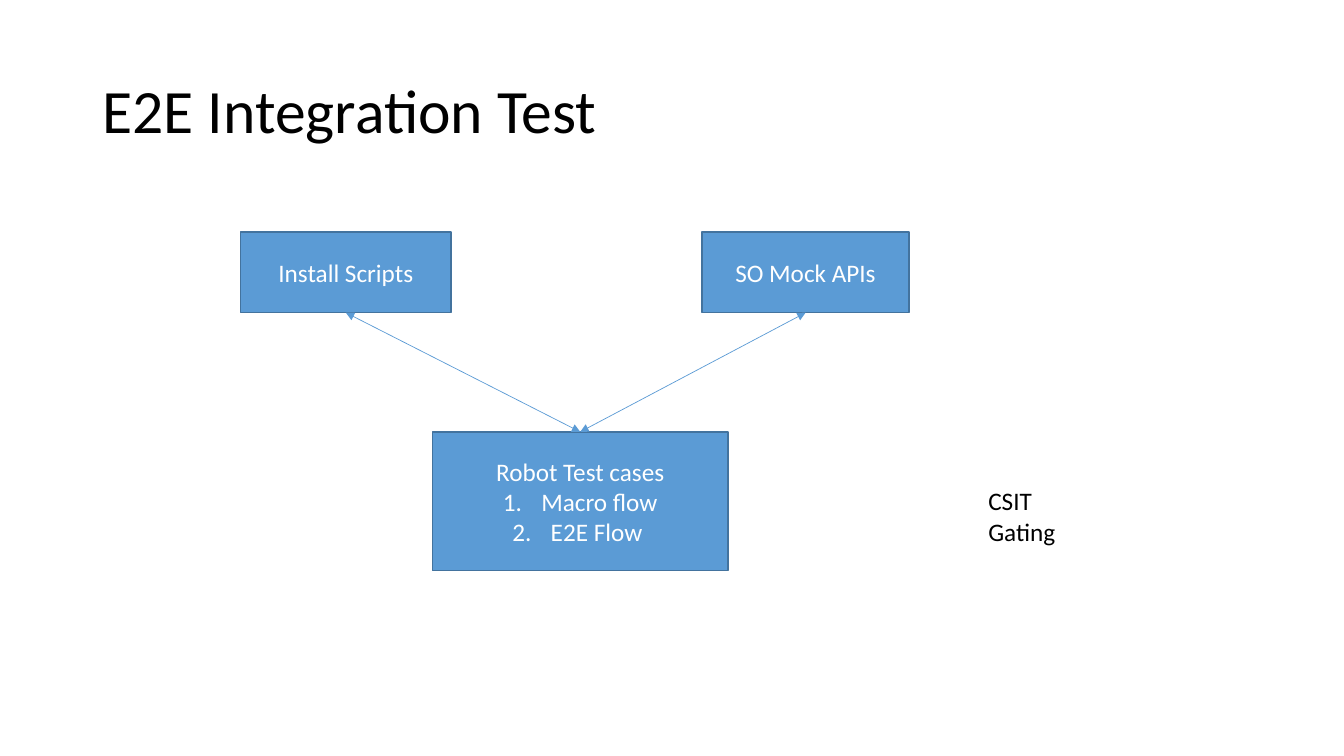
import pptx
import pptx.dml.color
import pptx.enum.shapes
import pptx.enum.text
import pptx.oxml.ns
import pptx.util
from lxml import etree

SLIDE_WIDTH = pptx.util.Inches(13.33)
SLIDE_HEIGHT = pptx.util.Inches(7.5)
SLIDE_BOX = (0, 0, SLIDE_WIDTH, SLIDE_HEIGHT)
FONT = "Calibri"
BLUE, DARK_BLUE, WHITE, BLACK = "5B9BD5", "43739E", "FFFFFF", "000000"


def color(hex_string):
    """Turn a hex string into a colour."""
    return pptx.dml.color.RGBColor.from_string(hex_string)


def part_of(box, left, top, width, height):
    """Return the part of a box given in percent of its size."""
    box_left, box_top, box_width, box_height = box
    return (
        round(box_left + box_width * left / 100),
        round(box_top + box_height * top / 100),
        round(box_width * width / 100),
        round(box_height * height / 100),
    )


def write(shape, lines, size, hex_string, alignment):
    """Fill a shape with one paragraph per line."""
    frame = shape.text_frame
    frame.text = "\n".join(lines)
    for paragraph in frame.paragraphs:
        paragraph.alignment = alignment
        paragraph.font.name = FONT
        paragraph.font.size = pptx.util.Pt(size)
        paragraph.font.color.rgb = color(hex_string)


def number(paragraph):
    """Give a paragraph an automatic number with a hanging indent."""
    indent = pptx.util.Inches(0.38)
    properties = paragraph._p.get_or_add_pPr()
    properties.set("marL", str(indent))
    properties.set("indent", str(-indent))
    numbering = etree.Element(pptx.oxml.ns.qn("a:buAutoNum"), type="arabicPeriod")
    properties.insert(0, numbering)


def add_title(slide, box, text):
    """Add the slide title, centred vertically in its box."""
    title = slide.shapes.add_textbox(*box)
    title.text_frame.word_wrap = True
    title.text_frame.vertical_anchor = pptx.enum.text.MSO_ANCHOR.MIDDLE
    write(title, [text], 44, BLACK, pptx.enum.text.PP_ALIGN.LEFT)
    title.text_frame.paragraphs[0].line_spacing = 0.9


def add_block(slide, box, lines):
    """Add a blue block whose lines after the first are numbered."""
    block = slide.shapes.add_shape(pptx.enum.shapes.MSO_SHAPE.RECTANGLE, *box)
    block.shadow.inherit = False
    block.fill.solid()
    block.fill.fore_color.rgb = color(BLUE)
    block.line.color.rgb = color(DARK_BLUE)
    block.line.width = pptx.util.Pt(1)
    block.text_frame.vertical_anchor = pptx.enum.text.MSO_ANCHOR.MIDDLE
    write(block, lines, 18, WHITE, pptx.enum.text.PP_ALIGN.CENTER)
    for paragraph in block.text_frame.paragraphs[1:]:
        number(paragraph)
    return block


def add_double_arrow(slide, upper, lower):
    """Join the bottom of the upper block to the top of the lower one."""
    arrow = slide.shapes.add_connector(
        pptx.enum.shapes.MSO_CONNECTOR.STRAIGHT, 0, 0, 0, 0
    )
    arrow.begin_connect(upper, 2)
    arrow.end_connect(lower, 0)
    arrow.line.color.rgb = color(BLUE)
    arrow.line.width = pptx.util.Pt(0.5)
    line = arrow.line._get_or_add_ln()
    for end in ("a:headEnd", "a:tailEnd"):
        etree.SubElement(line, pptx.oxml.ns.qn(end), type="triangle")
    etree.SubElement(arrow._element.spPr, pptx.oxml.ns.qn("a:effectLst"))


def add_test_diagram(slide, box):
    """Add the two inputs above the test cases and join them."""
    scripts = add_block(slide, part_of(box, 0, 0, 31.5, 23.8), ["Install Scripts"])
    mocks = add_block(slide, part_of(box, 69, 0, 31, 23.8), ["SO Mock APIs"])
    cases = add_block(
        slide,
        part_of(box, 28.7, 59, 44.2, 41),
        ["Robot Test cases", "Macro flow", "E2E Flow "],
    )
    for source in (scripts, mocks):
        add_double_arrow(slide, source, cases)


def add_side_note(slide, box, lines):
    """Add a plain note that grows with its text."""
    note = slide.shapes.add_textbox(*box)
    note.text_frame.word_wrap = False
    note.text_frame.auto_size = pptx.enum.text.MSO_AUTO_SIZE.SHAPE_TO_FIT_TEXT
    write(note, lines, 18, BLACK, pptx.enum.text.PP_ALIGN.LEFT)


def main():
    """Build and save the presentation."""
    presentation = pptx.Presentation()
    presentation.slide_width = SLIDE_WIDTH
    presentation.slide_height = SLIDE_HEIGHT
    slide = presentation.slides.add_slide(presentation.slide_layouts[6])
    add_title(slide, part_of(SLIDE_BOX, 6.9, 5.3, 86.3, 19.3), "E2E Integration Test")
    add_test_diagram(slide, part_of(SLIDE_BOX, 17.9, 30.7, 49.75, 44.8))
    add_side_note(slide, part_of(SLIDE_BOX, 72.8, 63.6, 7, 9.4), ["CSIT", "Gating"])
    presentation.save("out.pptx")


if __name__ == "__main__":
    main()
